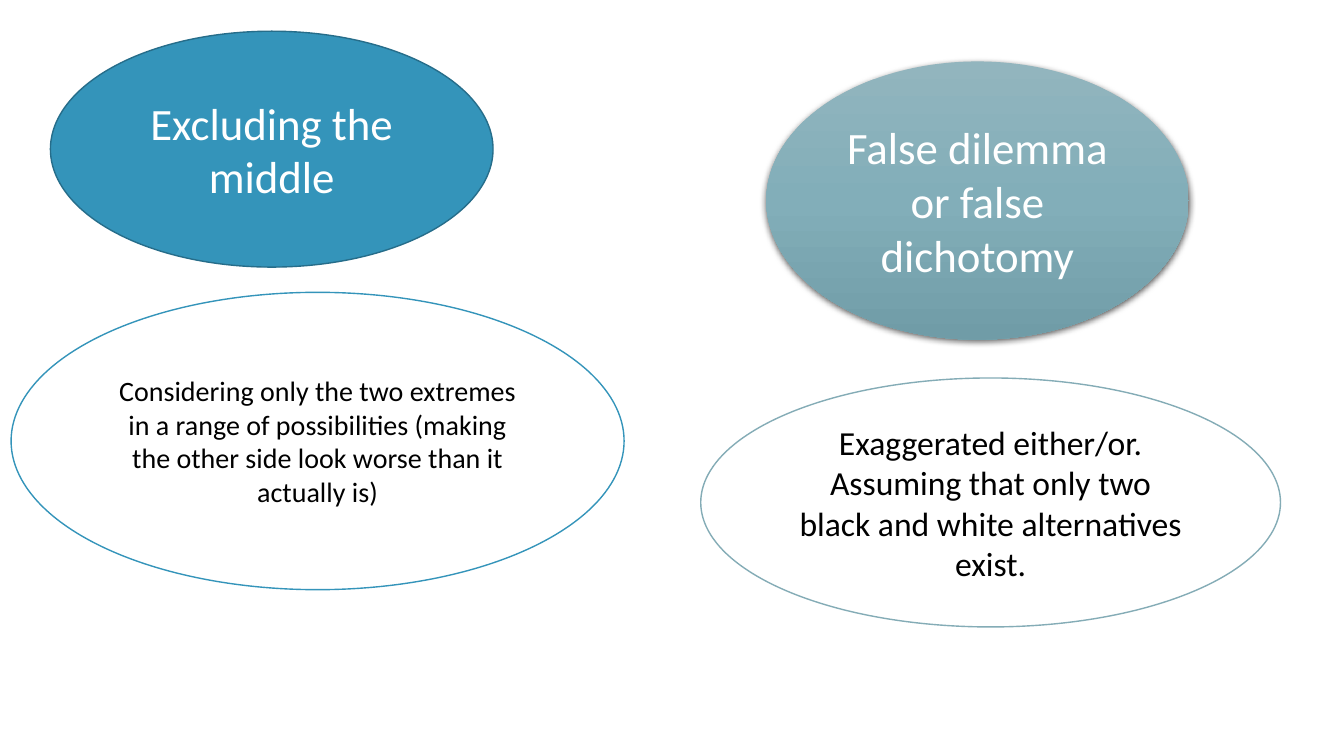
from lxml.etree import SubElement
from pptx import Presentation
from pptx.dml.color import RGBColor as RGB
from pptx.enum.shapes import MSO_SHAPE as SHAPE
from pptx.enum.text import MSO_ANCHOR as ANCHOR, PP_ALIGN as ALIGN
from pptx.oxml.ns import qn
from pptx.util import Inches, Pt

COLORS = {
    "white": "FFFFFF",
    "black": "000000",
    "blue": "3494BA",
    "blue_edge": "266D8A",
    "teal": "84ACB6",
    "teal_light": "92B5BE",
    "teal_mid": "82AEB9",
    "teal_dark": "709CA7",
}


class SlideBuilder:
    font = "Calibri"

    def __init__(self, slide):
        self.slide = slide

    def color(self, name):
        return RGB.from_string(COLORS[name])

    def ellipse(self, box, text, size, ink, fill=None, line=None):
        sp = self.slide.shapes.add_shape(SHAPE.OVAL, *map(Inches, box))
        sp.shadow.inherit = False
        if fill:
            sp.fill.solid()
            sp.fill.fore_color.rgb = self.color(fill)
        if line:
            sp.line.color.rgb = self.color(line)
            sp.line.width = Pt(1)
        else:
            sp.line.fill.background()
        tf = sp.text_frame
        tf.word_wrap = True
        tf.vertical_anchor = ANCHOR.MIDDLE
        p = tf.paragraphs[0]
        p.alignment = ALIGN.CENTER
        r = p.add_run()
        r.text = text
        r.font.name = self.font
        r.font.size = Pt(size)
        r.font.color.rgb = self.color(ink)
        return sp

    def gradient(self, sp, stops):
        sp.fill.gradient()
        sp.fill.gradient_angle = 270
        gs_list = sp._element.spPr.find(".//" + qn("a:gsLst"))
        for gs in list(gs_list):
            gs_list.remove(gs)
        for percent, name in stops:
            gs = SubElement(gs_list, qn("a:gs"), pos=str(percent * 1000))
            SubElement(gs, qn("a:srgbClr"), val=COLORS[name])

    def drop_shadow(self, sp, blur, distance, alpha):
        effects = sp._element.spPr.find(qn("a:effectLst"))
        shadow = SubElement(effects, qn("a:outerShdw"), blurRad=str(Pt(blur)),
                            dist=str(Pt(distance)), dir="5400000", rotWithShape="0")
        tone = SubElement(shadow, qn("a:srgbClr"), val=COLORS["black"])
        SubElement(tone, qn("a:alpha"), val=str(alpha * 1000))


def main():
    prs = Presentation()
    prs.slide_width, prs.slide_height = Inches(13.33), Inches(7.5)
    s = SlideBuilder(prs.slides.add_slide(prs.slide_layouts[6]))

    dilemma = s.ellipse((7.6, 0.61, 4.19, 2.76),
                        "False dilemma or false dichotomy", 32, "white")
    s.gradient(dilemma, [(0, "teal_light"), (50, "teal_mid"), (100, "teal_dark")])
    s.drop_shadow(dilemma, blur=4.5, distance=1.5, alpha=63)
    s.ellipse((6.95, 3.75, 5.75, 2.47),
              "Exaggerated either/or. Assuming that only two black and white "
              "alternatives exist.", 24, "black", "white", "teal")

    s.ellipse((0.5, 0.31, 4.39, 2.34),
              "Excluding the middle", 32, "white", "blue", "blue_edge")
    s.ellipse((0.11, 2.9, 6.08, 2.95),
              "Considering only the two extremes in a range of possibilities "
              "(making the other side look worse than it actually is)",
              20, "black", "white", "blue")

    prs.save("out.pptx")


if __name__ == "__main__":
    main()
